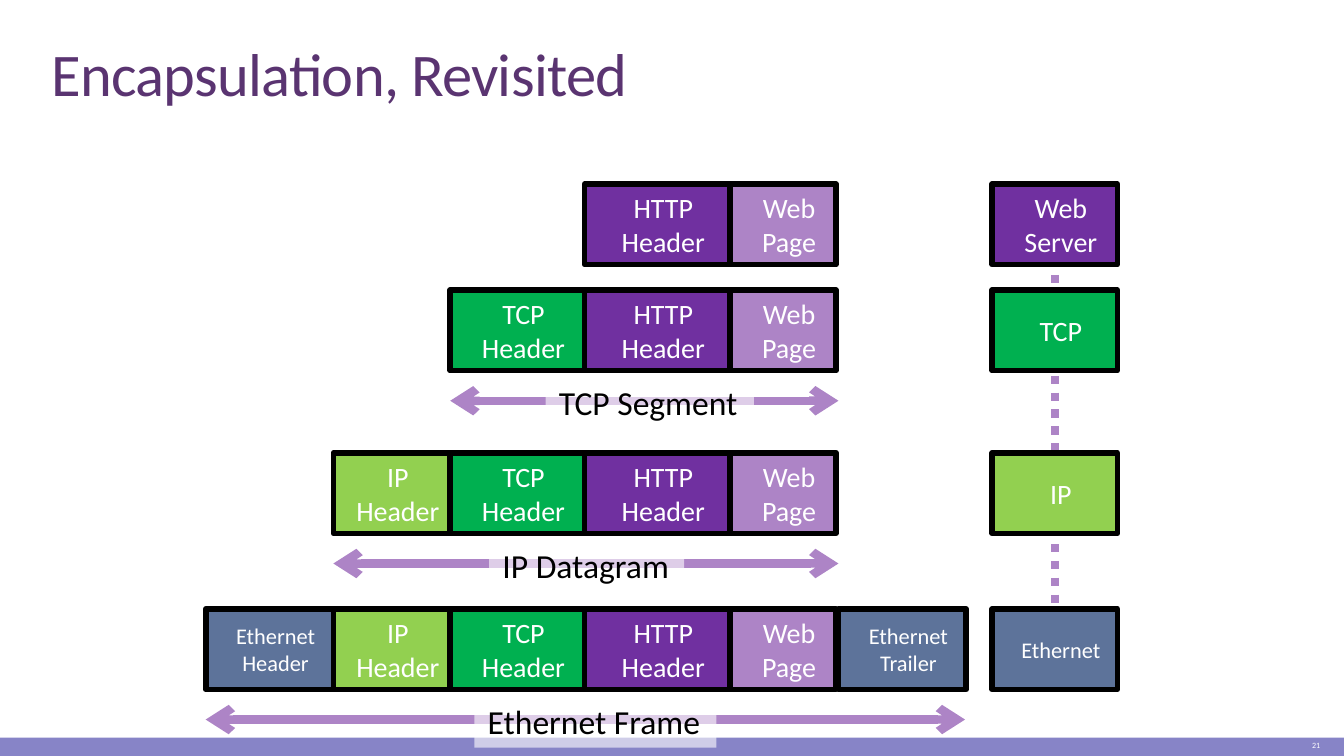
import dataclasses
import lxml.etree
import pptx
import pptx.dml.color
import pptx.enum.dml
import pptx.enum.shapes
import pptx.enum.text
import pptx.oxml.ns
import pptx.util

Pt = pptx.util.Pt
qn = pptx.oxml.ns.qn
Align = pptx.enum.text.PP_ALIGN
Anchor = pptx.enum.text.MSO_ANCHOR
Fit = pptx.enum.text.MSO_AUTO_SIZE


@dataclasses.dataclass(frozen=True)
class Theme:
    font: str = "Calibri"
    white: str = "FFFFFF"
    black: str = "000000"
    title: str = "5A3471"
    bar: str = "8784C7"
    http: str = "7030A0"
    web: str = "AD84C6"
    tcp: str = "00B050"
    ip: str = "92D050"
    ether: str = "5D739A"
    title_size: float = 32.4
    label_size: float = 18
    box_size: float = 15
    small_size: float = 12
    page_size: float = 4.3


THEME = Theme()
HIGH = 43.2
TOPS = [98.6, 155.4, 242.6, 326.2]
FIELDS = [
    ("Ethernet Header", 110.2, 68.4, THEME.ether, THEME.small_size),
    ("IP Header", 178.6, 62.6, THEME.ip, THEME.box_size),
    ("TCP Header", 241.2, 72, THEME.tcp, THEME.box_size),
    ("HTTP Header", 313.2, 77.8, THEME.http, THEME.box_size),
    ("Web Page", 391, 56.9, THEME.web, THEME.box_size),
    ("Ethernet Trailer", 449.2, 68.4, THEME.ether, THEME.small_size),
]
ROWS = [(3, 5), (2, 5), (1, 5), (0, 6)]
STACK = [
    ("Web Server", THEME.http, THEME.box_size),
    ("TCP", THEME.tcp, THEME.box_size),
    ("IP", THEME.ip, THEME.box_size),
    ("Ethernet", THEME.ether, THEME.small_size),
]
STACK_LEFT, STACK_WIDE = 531.6, 67
LABELS = [
    ("TCP Segment", 1, 292.3, 111.6, 449.2),
    ("IP Datagram", 2, 262.1, 104.4, 449.2),
    ("Ethernet Frame", 3, 254.2, 129.6, 517),
]
SPAN_GAP = 59.3


def rgb(code):
    return pptx.dml.color.RGBColor.from_string(code)


def add_rect(slide, left, top, wide, high, fill):
    kind = pptx.enum.shapes.MSO_SHAPE.RECTANGLE
    rect = slide.shapes.add_shape(kind, Pt(left), Pt(top), Pt(wide), Pt(high))
    rect.shadow.inherit = False
    rect.fill.solid()
    rect.fill.fore_color.rgb = rgb(fill)
    rect.line.fill.background()
    return rect


def set_text(shape, text, size, color, align=Align.LEFT, anchor=Anchor.TOP,
             pad=(7.2, 3.6), wrap=True):
    frame = shape.text_frame
    frame.word_wrap = wrap
    frame.vertical_anchor = anchor
    frame.margin_left = frame.margin_right = Pt(pad[0])
    frame.margin_top = frame.margin_bottom = Pt(pad[1])
    para = frame.paragraphs[0]
    para.text = text
    para.alignment = align
    para.font.name = THEME.font
    para.font.size = Pt(size)
    para.font.color.rgb = rgb(color)
    return para


def add_note(slide, left, top, wide, high, *args, **style):
    box = slide.shapes.add_textbox(Pt(left), Pt(top), Pt(wide), Pt(high))
    return set_text(box, *args, **style)


def add_box(slide, text, left, top, wide, fill, size):
    box = add_rect(slide, left, top, wide, HIGH, fill)
    box.line.color.rgb = rgb(THEME.black)
    box.line.width = Pt(3)
    para = set_text(box, text, size, THEME.white, Align.CENTER,
                    Anchor.MIDDLE, (5.2, 2.7))
    para.space_before = Pt(size * 0.2)
    para._p.get_or_add_pPr().set("marL", str(Pt(6.5)))


def add_line(slide, x1, y1, x2, y2):
    kind = pptx.enum.shapes.MSO_CONNECTOR.STRAIGHT
    line = slide.shapes.add_connector(kind, Pt(x1), Pt(y1), Pt(x2), Pt(y2))
    line.line.color.rgb = rgb(THEME.web)
    line.line.width = Pt(4.5)
    lxml.etree.SubElement(line._element.spPr, qn("a:effectLst"))
    return line


def add_span(slide, left, right, y):
    span = add_line(slide, left, y, right, y)
    for end in ("a:headEnd", "a:tailEnd"):
        tip = lxml.etree.SubElement(span.line._get_or_add_ln(), qn(end))
        tip.set("type", "arrow")


def add_label(slide, text, left, top, wide):
    label = add_rect(slide, left, top, wide, 28.8, THEME.white)
    tint = label._element.spPr.find(qn("a:solidFill"))[0]
    lxml.etree.SubElement(tint, qn("a:alpha")).set("val", "60000")
    set_text(label, text, THEME.label_size, THEME.black, wrap=False)
    label.text_frame.auto_size = Fit.SHAPE_TO_FIT_TEXT


def add_stack(slide):
    mid = STACK_LEFT + STACK_WIDE / 2
    link = add_line(slide, mid, TOPS[0] + HIGH / 2, mid, TOPS[-1] + HIGH / 2)
    link.line.dash_style = pptx.enum.dml.MSO_LINE.ROUND_DOT
    for (text, fill, size), top in zip(STACK, TOPS):
        add_box(slide, text, STACK_LEFT, top, STACK_WIDE, fill, size)


def add_rows(slide):
    for (first, last), top in zip(ROWS, TOPS):
        for text, left, wide, fill, size in FIELDS[first:last]:
            add_box(slide, text, left, top, wide, fill, size)


def add_spans(slide):
    for text, row, left, wide, right in LABELS:
        y = TOPS[row] + SPAN_GAP
        add_span(slide, FIELDS[ROWS[row][0]][1], right, y)
        add_label(slide, text, left, y - 13.7, wide)


def main():
    deck = pptx.Presentation()
    deck.slide_width, deck.slide_height = Pt(720), Pt(405)
    slide = deck.slides.add_slide(deck.slide_layouts[6])
    add_rect(slide, 0, 395.2, 720, 9.8, THEME.bar)
    title = add_note(slide, 23, 17.3, 682.6, 43.2, "Encapsulation, Revisited",
                     THEME.title_size, THEME.title, anchor=Anchor.BOTTOM,
                     pad=(4.5, 2.2))
    title.line_spacing = 0.85
    title.runs[0].font._element.set("spc", "-40")
    add_note(slide, 636.5, 393.1, 77.8, 12.2, "21", THEME.page_size,
             THEME.white, align=Align.RIGHT, anchor=Anchor.MIDDLE)
    add_stack(slide)
    add_rows(slide)
    add_spans(slide)
    deck.save("out.pptx")


if __name__ == "__main__":
    main()
